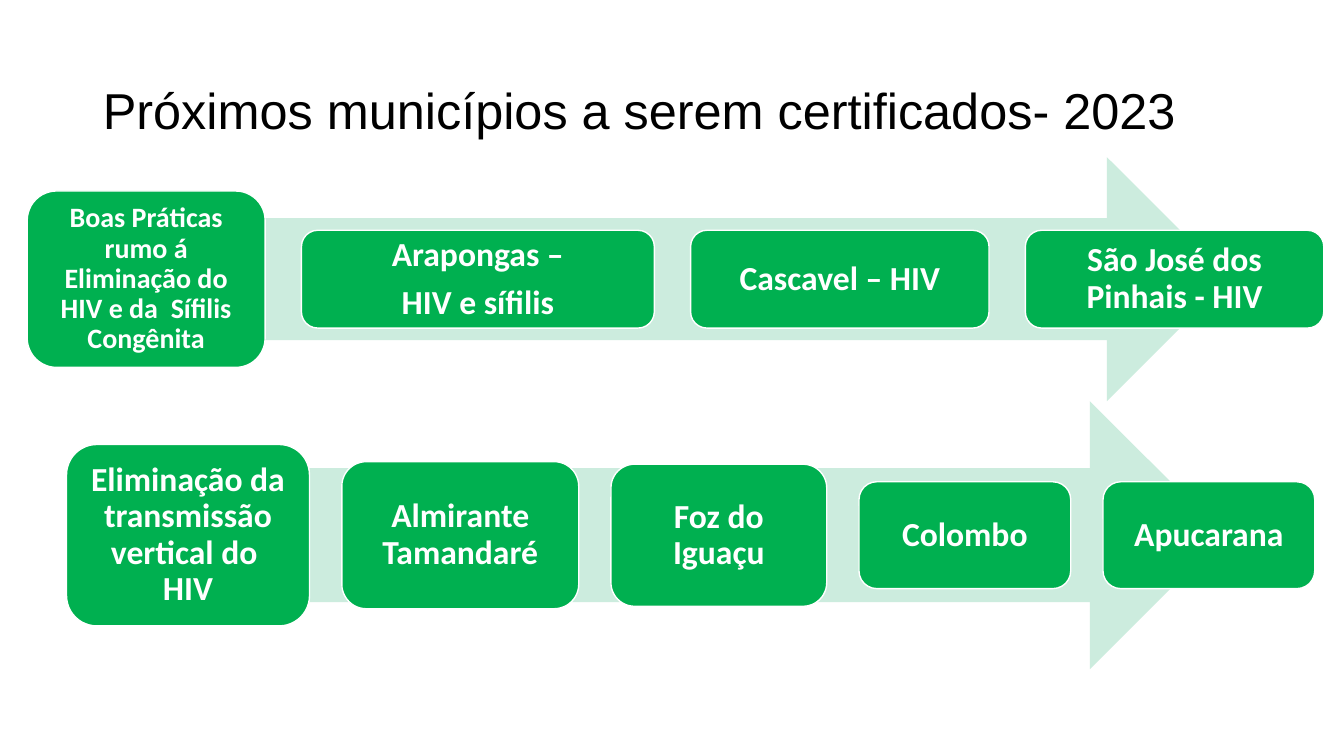
from dataclasses import dataclass

from pptx import Presentation
from pptx import util as u
from pptx.dml.color import RGBColor
from pptx.enum import shapes, text

TITLE = "Próximos municípios a serem certificados- 2023"

# Each box: paragraphs, width, height (inches)
ROWS = [
    {
        "arrow": (1.23, 10.96, 2.42), "center": 2.77, "left": 0.27, "gap": 0.36,
        "boxes": [
            (["Boas Práticas rumo á Eliminação do HIV e da  Sífilis Congênita"], 2.36, 1.75),
            (["Arapongas –", "HIV e sífilis"], 3.5, 0.97),
            (["Cascavel – HIV"], 2.96, 0.97),
            (["São José dos Pinhais - HIV"], 2.96, 0.97),
        ],
        "first_size": 20,
    },
    {
        "arrow": (1.58, 10.56, 2.66), "center": 5.31, "left": 0.66, "gap": 0.32,
        "boxes": [
            (["Eliminação da transmissão vertical do  HIV"], 2.41, 1.8),
            (["Almirante Tamandaré"], 2.35, 1.46),
            (["Foz do Iguaçu"], 2.14, 1.41),
            (["Colombo"], 2.1, 1.06),
            (["Apucarana"], 2.1, 1.06),
        ],
        "first_size": 24,
    },
]


@dataclass(frozen=True)
class Theme:
    arrow: RGBColor = RGBColor(0xCC, 0xEC, 0xDE)
    box: RGBColor = RGBColor(0x00, 0xB0, 0x50)
    light: RGBColor = RGBColor(0xFF, 0xFF, 0xFF)
    dark: RGBColor = RGBColor(0x00, 0x00, 0x00)
    title_font: str = "Arial"
    box_font: str = "Calibri"
    title_size: int = 36
    box_size: int = 24
    line_spacing: float = 0.9
    space_after: float = 0.35


THEME = Theme()


def add_run(paragraph, words, font, size, color, bold=False):
    run = paragraph.add_run()
    run.text = words
    run.font.name = font
    run.font.size = u.Pt(size)
    run.font.bold = bold
    run.font.color.rgb = color
    paragraph.line_spacing = THEME.line_spacing


def add_centered(group, kind, left, center, width, height, fill):
    """Add a filled shape whose vertical middle lies at center."""
    shape = group.shapes.add_shape(
        kind, u.Inches(left), u.Inches(center - height / 2), u.Inches(width), u.Inches(height))
    shape.shadow.inherit = False
    shape.fill.solid()
    shape.fill.fore_color.rgb = fill
    shape.line.fill.background()
    return shape


def fill_box(shape, lines, size):
    shape.line.color.rgb = THEME.light
    shape.line.width = u.Pt(1)
    frame = shape.text_frame
    frame.word_wrap = True
    frame.vertical_anchor = text.MSO_ANCHOR.MIDDLE
    inset = u.Pt(size * 0.3)
    frame.margin_left = frame.margin_right = inset
    frame.margin_top = frame.margin_bottom = inset
    for index, words in enumerate(lines):
        paragraph = frame.add_paragraph() if index else frame.paragraphs[0]
        paragraph.alignment = text.PP_ALIGN.CENTER
        if index < len(lines) - 1:
            paragraph.space_after = u.Pt(size * THEME.space_after)
        add_run(paragraph, words, THEME.box_font, size, THEME.light, bold=True)


def add_row(slide, row):
    group = slide.shapes.add_group_shape()
    arrow_left, arrow_width, arrow_height = row["arrow"]
    add_centered(group, shapes.MSO_SHAPE.RIGHT_ARROW, arrow_left, row["center"],
                 arrow_width, arrow_height, THEME.arrow)
    left = row["left"]
    for index, (lines, width, height) in enumerate(row["boxes"]):
        box = add_centered(group, shapes.MSO_SHAPE.ROUNDED_RECTANGLE, left, row["center"],
                           width, height, THEME.box)
        fill_box(box, lines, THEME.box_size if index else row["first_size"])
        left += width + row["gap"]


def add_title(slide):
    title = slide.shapes.title
    title.left, title.top = u.Inches(0.92), u.Inches(0.4)
    title.width, title.height = u.Inches(11.49), u.Inches(1.44)
    frame = title.text_frame
    frame.word_wrap = True
    frame.vertical_anchor = text.MSO_ANCHOR.MIDDLE
    frame.paragraphs[0].alignment = text.PP_ALIGN.LEFT
    add_run(frame.paragraphs[0], TITLE, THEME.title_font, THEME.title_size, THEME.dark)


def main():
    presentation = Presentation()
    presentation.slide_width = u.Inches(13.33)
    presentation.slide_height = u.Inches(7.5)
    slide = presentation.slides.add_slide(presentation.slide_layouts[5])
    add_title(slide)
    for row in ROWS:
        add_row(slide, row)
    presentation.save("out.pptx")


if __name__ == "__main__":
    main()
